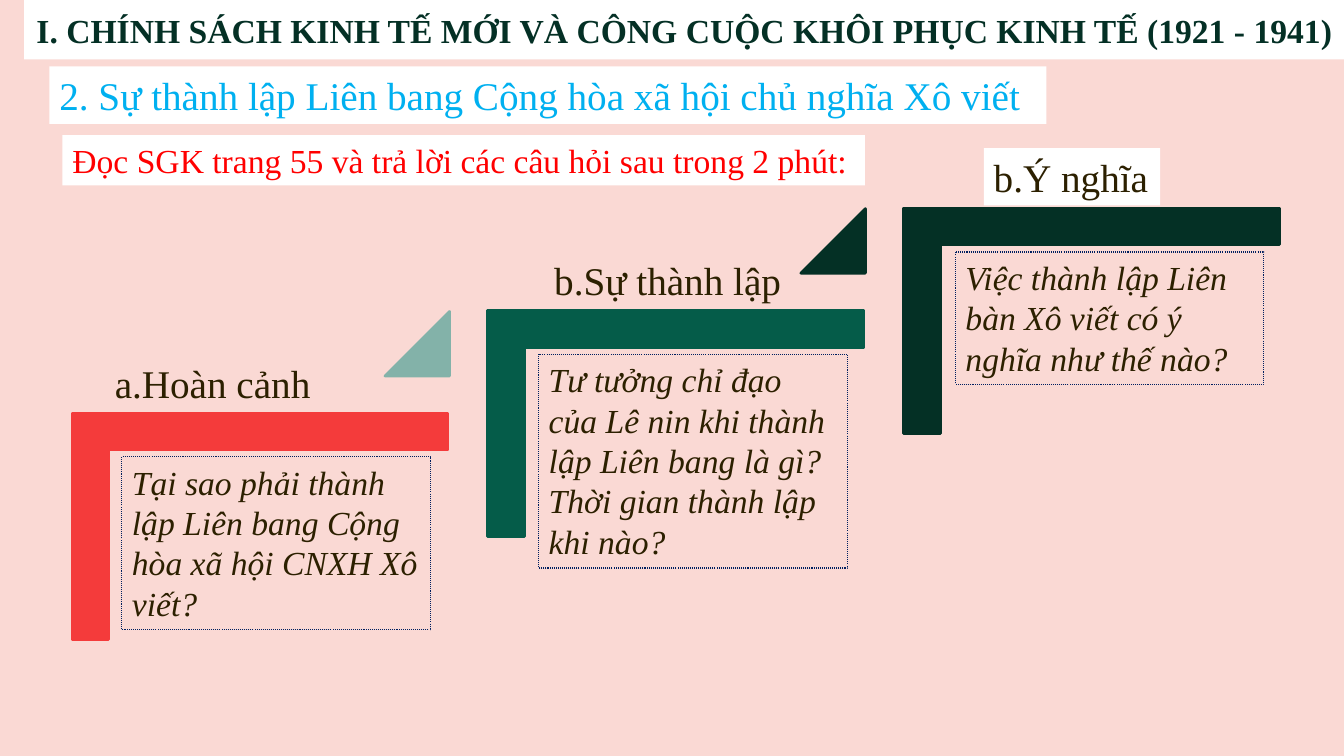
from dataclasses import dataclass

from pptx import Presentation
from pptx.dml.color import RGBColor
from pptx.enum.dml import MSO_LINE
from pptx.enum.shapes import MSO_SHAPE
from pptx.enum.text import MSO_ANCHOR, MSO_AUTO_SIZE, PP_ALIGN
from pptx.util import Inches, Pt

FONT = "Times New Roman"
WHITE, BROWN, DARK_GREEN, NAVY = "FFFFFF", "2C2000", "043025", "002060"
SLIDE_WIDTH, SLIDE_HEIGHT = Inches(13.33), Inches(7.5)


@dataclass(frozen=True)
class Box:
    """A frame in percent of the slide's width and height."""
    left: float
    top: float
    width: float
    height: float

    def emu(self) -> tuple[int, int, int, int]:
        return (round(self.left * SLIDE_WIDTH / 100), round(self.top * SLIDE_HEIGHT / 100),
                round(self.width * SLIDE_WIDTH / 100), round(self.height * SLIDE_HEIGHT / 100))


@dataclass(frozen=True)
class Step:
    color: str
    label: str
    label_width: float
    label_fill: str | None
    question: str
    question_height: float


STEPS = [
    Step("F43B3B", "a.Hoàn cảnh", 16.2, None,
         "Tại sao phải thành lập Liên bang Cộng hòa xã hội CNXH Xô viết?", 22.93),
    Step("055C49", "b.Sự thành lập", 18.53, None,
         "Tư tưởng chỉ đạo của Lê nin khi thành lập Liên bang là gì? "
         "Thời gian thành lập khi nào?", 28.27),
    Step(DARK_GREEN, "b.Ý nghĩa", 13.13, WHITE,
         "Việc thành lập Liên bàn Xô viết có ý nghĩa như thế nào?", 17.47),
]
RISER_COLORS = ["83B2A9", DARK_GREEN]  # one between each pair of steps


def rgb(value: str) -> RGBColor:
    return RGBColor.from_string(value)


def paint(shape, fill: str) -> None:
    shape.fill.solid()
    shape.fill.fore_color.rgb = rgb(fill)


def write(shape, text: str, *, size: float, color: str, bold: bool = False,
          italic: bool = False, wrap: bool = False, align=PP_ALIGN.LEFT,
          anchor=MSO_ANCHOR.TOP, auto_size=MSO_AUTO_SIZE.SHAPE_TO_FIT_TEXT) -> None:
    frame = shape.text_frame
    frame.word_wrap, frame.auto_size, frame.vertical_anchor = wrap, auto_size, anchor
    paragraph = frame.paragraphs[0]
    paragraph.alignment = align
    run = paragraph.add_run()
    run.text = text
    font = run.font
    font.name, font.size, font.bold, font.italic = FONT, Pt(size), bold, italic
    font.color.rgb = rgb(color)


def add_text(slide, box: Box, text: str, *, fill: str | None = None, **text_format):
    shape = slide.shapes.add_textbox(*box.emu())
    if fill:
        paint(shape, fill)
    write(shape, text, **text_format)
    return shape


def add_solid(slide, kind, frame: tuple[int, int, int, int], color: str, *adjustments: float):
    shape = slide.shapes.add_shape(kind, *frame)
    shape.shadow.inherit = False
    paint(shape, color)
    shape.line.color.rgb = rgb(color)
    shape.line.width = Pt(2)
    for index, value in enumerate(adjustments):
        shape.adjustments[index] = value
    return shape


def add_corner(slide, box: Box, color: str) -> None:
    """Draw a quarter-turned corner that fills the box as seen."""
    left, top, width, height = box.emu()
    shift = (width - height) // 2
    corner = add_solid(slide, MSO_SHAPE.CORNER, (left + shift, top - shift, height, width),
                       color, 0.161, 0.161)
    corner.rotation = 90


def add_title(slide, text: str) -> None:
    title = slide.shapes.title
    title.left, title.top, title.width, title.height = Box(1.8, 0, 98.25, 7.87).emu()
    paint(title, WHITE)
    frame = title.text_frame
    frame.margin_left = frame.margin_right = Inches(0.1)
    frame.margin_top = frame.margin_bottom = Inches(0.1)
    write(title, text, size=24, color=DARK_GREEN, bold=True, wrap=True,
          align=PP_ALIGN.CENTER, anchor=MSO_ANCHOR.MIDDLE, auto_size=MSO_AUTO_SIZE.NONE)


def add_step(slide, index: int, step: Step) -> None:
    add_corner(slide, Box(5.36 + 30.94 * index, 54.73 - 13.6 * index, 27.98, 29.87), step.color)
    add_text(slide, Box(7.8 + 32.7 * index, 46.93 - 13.67 * index, step.label_width, 7.6),
             step.label, fill=step.label_fill, size=28, color=BROWN)
    question = add_text(
        slide, Box(9.08 + 31.01 * index, 60.4 - 13.53 * index, 22.95, step.question_height),
        step.question, size=24, color=BROWN, italic=True, wrap=True)
    question.line.color.rgb = rgb(NAVY)
    question.line.width = Pt(0.75)
    question.line.dash_style = MSO_LINE.ROUND_DOT


def main() -> None:
    deck = Presentation()
    deck.slide_width, deck.slide_height = SLIDE_WIDTH, SLIDE_HEIGHT
    slide = deck.slides.add_slide(deck.slide_layouts[5])
    slide.background.fill.solid()
    slide.background.fill.fore_color.rgb = rgb("FAD9D4")

    # Headings
    add_title(slide, "I. CHÍNH SÁCH KINH TẾ MỚI VÀ CÔNG CUỘC KHÔI PHỤC KINH TẾ (1921 - 1941)")
    add_text(slide, Box(3.68, 8.8, 74.18, 7.6),
             "2. Sự thành lập Liên bang Cộng hòa xã hội chủ nghĩa Xô viết",
             fill=WHITE, size=28, color="00B0F0")
    add_text(slide, Box(4.65, 17.87, 59.7, 6.67),
             "Đọc SGK trang 55 và trả lời các câu hỏi sau trong 2 phút:",
             fill=WHITE, size=24, color="FF0000")

    # Rising staircase of questions
    for index, step in enumerate(STEPS):
        add_step(slide, index, step)
    for index, color in enumerate(RISER_COLORS):
        riser = Box(28.65 + 30.94 * index, 41.2 - 13.6 * index, 4.8, 8.53)
        add_solid(slide, MSO_SHAPE.ISOSCELES_TRIANGLE, riser.emu(), color, 1)

    deck.save("out.pptx")


if __name__ == "__main__":
    main()
